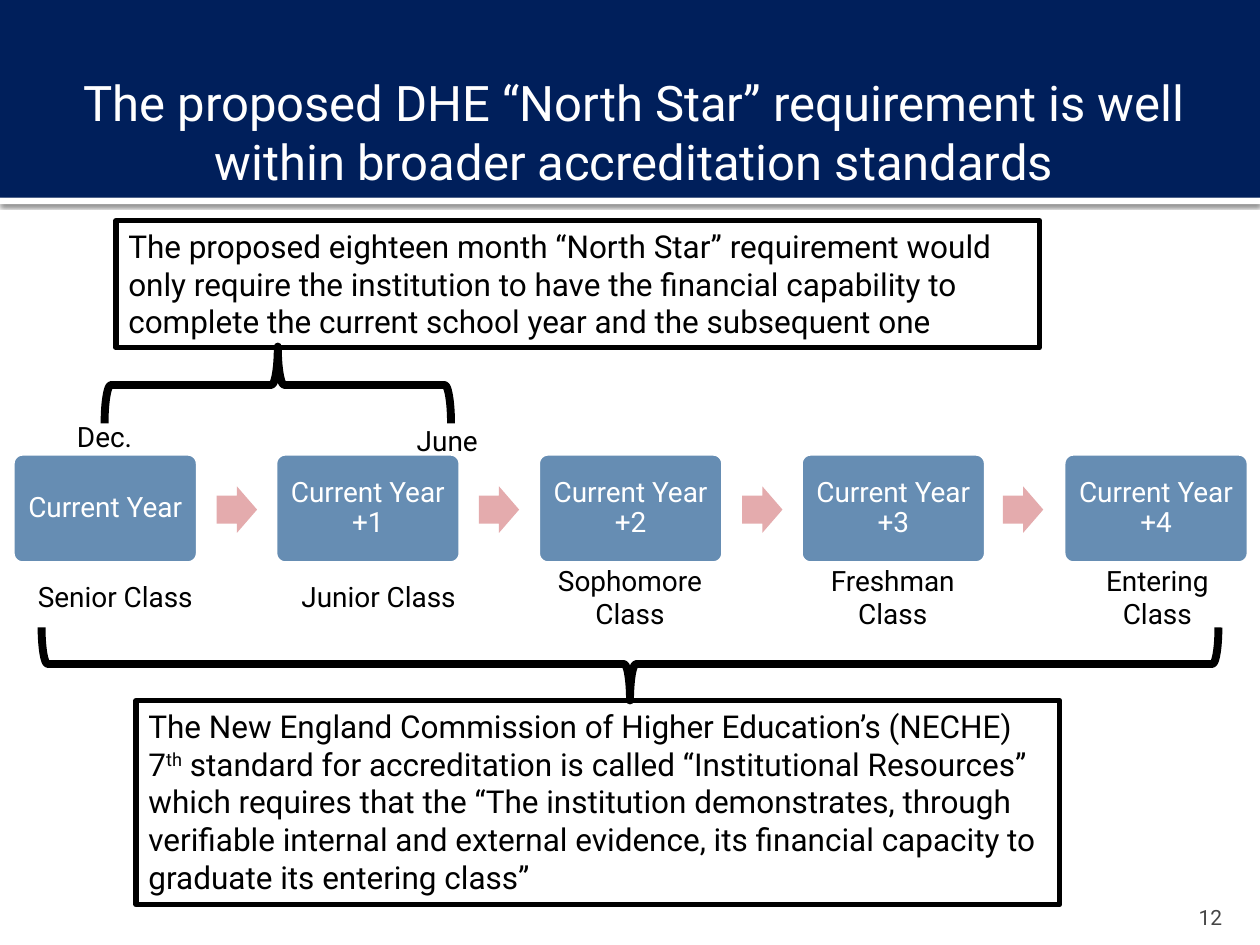
from dataclasses import dataclass

from lxml import etree
from pptx import Presentation
from pptx.dml.color import RGBColor
from pptx.enum.shapes import MSO_SHAPE
from pptx.enum.text import MSO_ANCHOR, MSO_AUTO_SIZE, PP_ALIGN
from pptx.oxml.ns import qn
from pptx.util import Inches, Pt

RECTANGLE = MSO_SHAPE.RECTANGLE
ROUNDED = MSO_SHAPE.ROUNDED_RECTANGLE
ARROW = MSO_SHAPE.RIGHT_ARROW
BRACE = MSO_SHAPE.RIGHT_BRACE
LEFT, CENTER, RIGHT = PP_ALIGN.LEFT, PP_ALIGN.CENTER, PP_ALIGN.RIGHT
TOP, MIDDLE, BOTTOM = MSO_ANCHOR.TOP, MSO_ANCHOR.MIDDLE, MSO_ANCHOR.BOTTOM
NO_AUTOFIT = MSO_AUTO_SIZE.NONE

NAVY = RGBColor(0x00, 0x1F, 0x5B)
BLUE = RGBColor(0x66, 0x8D, 0xB3)
PINK = RGBColor(0xE4, 0xAB, 0xAD)
GRAY = RGBColor(0x45, 0x45, 0x45)
WHITE = RGBColor(0xFF, 0xFF, 0xFF)
BLACK = RGBColor(0x00, 0x00, 0x00)

FONT = "Roboto"
SUPERSCRIPT_MARK = "^"
YEAR_LEFT, YEAR_TOP, YEAR_STEP = 0.09, 3.59, 2.085
YEAR_WIDTH, YEAR_HEIGHT = 1.49, 0.89


@dataclass(frozen=True)
class Area:
    left: float
    top: float
    width: float
    height: float

    def lengths(self):
        return [Inches(side) for side in (self.left, self.top, self.width, self.height)]


@dataclass(frozen=True)
class Label:
    text: str
    area: Area


@dataclass(frozen=True)
class Brace:
    area: Area
    rotation: int


YEARS = ["Current Year"] + [f"Current Year\n+{number}" for number in range(1, 5)]
ARROW_LEFTS = [1.72, 3.8, 5.89, 7.96]

BRACES = [
    Brace(Area(1.9, 1.68, 0.61, 2.75), 270),
    Brace(Area(4.71, 0.6, 0.58, 9.34), 90),
]

CALLOUTS = [
    Label(
        "The New England Commission of Higher Education’s (NECHE) 7^th^ standard for "
        "accreditation is called “Institutional Resources” which requires that the “The "
        "institution demonstrates, through verifiable internal and external evidence, its "
        "financial capacity to graduate its entering class”",
        Area(1.08, 5.56, 7.33, 1.62),
    ),
    Label(
        "The proposed eighteen month “North Star” requirement would only require the "
        "institution to have the financial capability to complete the current school year "
        "and the subsequent one",
        Area(0.92, 1.75, 7.33, 1.01),
    ),
]

LABELS = [
    Label("Senior Class", Area(0.17, 4.55, 1.49, 0.37)),
    Label("Junior Class", Area(2.26, 4.55, 1.49, 0.37)),
    Label("Sophomore\nClass", Area(4.32, 4.42, 1.36, 0.64)),
    Label("Freshman Class", Area(6.34, 4.42, 1.49, 0.64)),
    Label("Entering Class", Area(8.44, 4.42, 1.49, 0.64)),
    Label("Dec.", Area(0.46, 3.28, 0.74, 0.37)),
    Label("June", Area(3.18, 3.31, 0.74, 0.37)),
]


def write_text(box, text: str, *, size=16, color=BLACK, align=CENTER, anchor=TOP,
               margins=(0.1, 0.05, 0.1, 0.05), line_spacing=None) -> None:
    frame = box.text_frame
    frame.word_wrap = True
    frame.auto_size = NO_AUTOFIT
    frame.vertical_anchor = anchor
    (frame.margin_left, frame.margin_top,
     frame.margin_right, frame.margin_bottom) = [Inches(margin) for margin in margins]
    for index, line in enumerate(text.split("\n")):
        para = frame.add_paragraph() if index else frame.paragraphs[0]
        para.alignment = align
        para.line_spacing = line_spacing
        for part, words in enumerate(line.split(SUPERSCRIPT_MARK)):
            span = para.add_run()
            span.text = words
            span.font.name = FONT
            span.font.size = Pt(size)
            span.font.color.rgb = color
            if part % 2:
                span.font._element.set("baseline", "30000")


def draw_shape(page, kind, area: Area, *, fill=None, line=None, line_width=1.0,
               adjustments=()):
    box = page.shapes.add_shape(kind, *area.lengths())
    box.shadow.inherit = False
    if fill is None:
        box.fill.background()
    else:
        box.fill.solid()
        box.fill.fore_color.rgb = fill
    if line is None:
        box.line.fill.background()
    else:
        box.line.color.rgb = line
        box.line.width = Pt(line_width)
    for index, value in enumerate(adjustments):
        box.adjustments[index] = value
    return box


def draw_text(page, label: Label, **text_format) -> None:
    box = page.shapes.add_textbox(*label.area.lengths())
    write_text(box, label.text, **text_format)


def add_shadow(box) -> None:
    effects = box._element.spPr.find(qn("a:effectLst"))
    shadow = etree.SubElement(effects, qn("a:outerShdw"), blurRad=str(Pt(2.5)),
                              dist=str(Pt(0.8)), dir="5400000", rotWithShape="0")
    color = etree.SubElement(shadow, qn("a:srgbClr"), val="000000")
    etree.SubElement(color, qn("a:alpha"), val="60000")


def draw_header(page) -> None:
    add_shadow(draw_shape(page, RECTANGLE, Area(0, 1.57, 10, 0.05), fill=WHITE))
    draw_shape(page, RECTANGLE, Area(0, 0, 10, 1.57), fill=NAVY)
    title = page.shapes.title
    title._element.getparent().append(title._element)
    title.left, title.top, title.width, title.height = Area(0.42, 0.58, 9.17, 0.92).lengths()
    write_text(title, "The proposed DHE “North Star” requirement is well within broader "
               "accreditation standards", size=28, color=WHITE, anchor=MIDDLE,
               margins=(0.1, 0.05, 0.05, 0.05))


def draw_timeline(page) -> None:
    for index, year in enumerate(YEARS):
        area = Area(YEAR_LEFT + index * YEAR_STEP, YEAR_TOP, YEAR_WIDTH, YEAR_HEIGHT)
        box = draw_shape(page, ROUNDED, area, fill=BLUE, line=WHITE, line_width=3.78,
                         adjustments=[0.1])
        write_text(box, year, color=WHITE, anchor=MIDDLE, margins=(0.09,) * 4,
                   line_spacing=0.9)
    for left in ARROW_LEFTS:
        draw_shape(page, ARROW, Area(left, 3.86, 0.32, 0.37), fill=PINK,
                   adjustments=[0.6, 0.5])


def main() -> None:
    deck = Presentation()
    deck.slide_width, deck.slide_height = Inches(10), Inches(7.5)
    page = deck.slides.add_slide(deck.slide_layouts.get_by_name("Title Only"))
    draw_header(page)
    draw_text(page, Label("12", Area(9, 7.08, 0.8, 0.3)), size=12, color=GRAY,
              align=RIGHT, anchor=BOTTOM, margins=(0.1, 0.05, 0.1, 0))
    draw_timeline(page)
    for brace in BRACES:
        box = draw_shape(page, BRACE, brace.area, line=BLACK, line_width=4.5)
        box.rotation = brace.rotation
    for callout in CALLOUTS:
        box = draw_shape(page, RECTANGLE, callout.area, line=BLACK, line_width=3)
        write_text(box, callout.text, size=18, align=LEFT)
    for label in LABELS:
        draw_text(page, label)
    deck.save("out.pptx")


if __name__ == "__main__":
    main()
